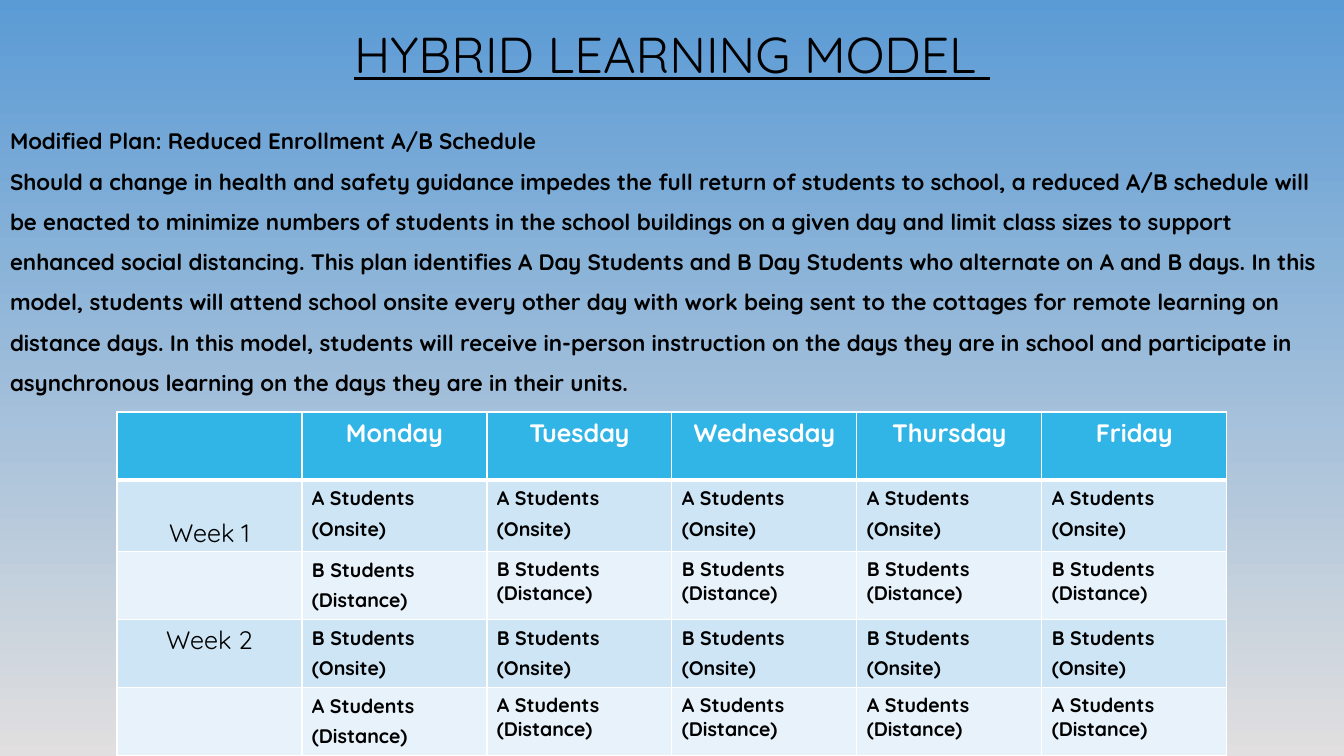
from dataclasses import dataclass

from pptx import Presentation
from pptx.dml.color import RGBColor
from pptx.enum.text import MSO_ANCHOR, MSO_AUTO_SIZE, PP_ALIGN
from pptx.oxml import parse_xml
from pptx.oxml.ns import nsdecls
from pptx.util import Emu, Pt

LEFT, CENTER = PP_ALIGN.LEFT, PP_ALIGN.CENTER
TOP = MSO_ANCHOR.TOP
FIXED_SIZE = MSO_AUTO_SIZE.NONE

# Scale: 100.8 px to the inch
PX = 914400 / 100.8
PAGE_WIDTH, PAGE_HEIGHT = 1344, 756
INSET_X, INSET_Y = 10, 5
CELL_BOTTOM_INSET = 3

FONT = "Quicksand"
BLACK = RGBColor(0x00, 0x00, 0x00)
WHITE = RGBColor(0xFF, 0xFF, 0xFF)
SKY = RGBColor(0x5B, 0x9B, 0xD5)
MIST = RGBColor(0xE1, 0xDF, 0xDF)
HEADER_BLUE = RGBColor(0x31, 0xB4, 0xE6)
BAND_DARK = RGBColor(0xCE, 0xE5, 0xF5)
BAND_LIGHT = RGBColor(0xE8, 0xF2, 0xFA)

TITLE = "HYBRID LEARNING MODEL "
PLAN = [
    "Modified Plan: Reduced Enrollment A/B Schedule",
    "Should a change in health and safety guidance impedes the full return of "
    "students to school, a reduced A/B schedule will be enacted to minimize "
    "numbers of students in the school buildings on a given day and limit class "
    "sizes to support enhanced social distancing. This plan identifies A Day "
    "Students and B Day Students who alternate on A and B days. In this model, "
    "students will attend school onsite every other day with work being sent to "
    "the cottages for remote learning on distance days. In this model, students "
    "will receive in-person instruction on the days they are in school and "
    "participate in asynchronous learning on the days they are in their units.",
]
DAYS = ["Monday", "Tuesday", "Wednesday", "Thursday", "Friday"]
TABLE_LEFT, TABLE_TOP, COLUMN_WIDTH = 117, 412, 185
HEADER_HEIGHT = 68


@dataclass(frozen=True)
class WeekRow:
    week: str
    entry: str
    fill: RGBColor
    height: int = 68
    week_inset: int = INSET_Y
    loose_days: int = len(DAYS)  # leading days set with wider line spacing


WEEK_ROWS = [
    WeekRow("Week 1", "A Students (Onsite)", BAND_DARK, height=71, week_inset=37),
    WeekRow("", "B Students (Distance)", BAND_LIGHT, loose_days=1),
    WeekRow("Week 2", "B Students (Onsite)", BAND_DARK),
    WeekRow("", "A Students (Distance)", BAND_LIGHT, loose_days=1),
]


def px(length: int) -> Emu:
    return Emu(round(length * PX))


def write(para, text: str, *, size: int, color: RGBColor = BLACK, bold: bool = False,
          underline: bool = False, align=LEFT, spacing: float = 1.0) -> None:
    para.alignment = align
    para.line_spacing = spacing
    para.space_before = para.space_after = Pt(0)
    span = para.add_run()
    span.text = text
    font = span.font
    font.name, font.size, font.bold, font.underline = FONT, Pt(size), bold, underline
    font.color.rgb = color


def place(box, left: int, top: int, width: int, height: int):
    """Move a placeholder and return its text frame, set to wrap from the top."""
    box.left, box.top, box.width, box.height = map(px, (left, top, width, height))
    frame = box.text_frame
    frame.auto_size = FIXED_SIZE
    frame.word_wrap = True
    frame.vertical_anchor = TOP
    frame.margin_left = frame.margin_right = px(INSET_X)
    frame.margin_top = frame.margin_bottom = px(INSET_Y)
    return frame


def remove_bullet(para) -> None:
    properties = para._p.get_or_add_pPr()
    properties.set("marL", "0")
    properties.set("indent", "0")
    properties.append(parse_xml(f"<a:buNone {nsdecls('a')}/>"))


def style_cell(cell, fill: RGBColor, *, top_line: int = 1, bottom_line: int = 1,
               top_inset: int = INSET_Y) -> None:
    cell.fill.solid()
    cell.fill.fore_color.rgb = fill
    cell.vertical_anchor = TOP
    cell.margin_left = cell.margin_right = px(INSET_X)
    cell.margin_top, cell.margin_bottom = px(top_inset), px(CELL_BOTTOM_INSET)
    properties = cell._tc.get_or_add_tcPr()
    sides = {"lnL": 1, "lnR": 1, "lnT": top_line, "lnB": bottom_line}
    for index, (side, points) in enumerate(sides.items()):
        properties.insert(index, parse_xml(
            f'<a:{side} {nsdecls("a")} w="{Pt(points)}"><a:solidFill>'
            f'<a:srgbClr val="{WHITE}"/></a:solidFill></a:{side}>'))


def add_schedule(page) -> None:
    heights = [HEADER_HEIGHT] + [row.height for row in WEEK_ROWS]
    columns = len(DAYS) + 1
    table = page.shapes.add_table(
        len(heights), columns, px(TABLE_LEFT), px(TABLE_TOP),
        px(COLUMN_WIDTH * columns), px(sum(heights))).table
    for column in table.columns:
        column.width = px(COLUMN_WIDTH)
    for table_row, height in zip(table.rows, heights):
        table_row.height = px(height)

    # Header row
    for column, day in enumerate(["", *DAYS]):
        cell = table.cell(0, column)
        style_cell(cell, HEADER_BLUE, bottom_line=3)
        if day:
            write(cell.text_frame.paragraphs[0], day, size=18, color=WHITE,
                  bold=True, align=CENTER)

    # Week rows
    for number, row in enumerate(WEEK_ROWS, start=1):
        top_line = 3 if number == 1 else 1
        week_cell = table.cell(number, 0)
        style_cell(week_cell, row.fill, top_line=top_line, top_inset=row.week_inset)
        if row.week:
            write(week_cell.text_frame.paragraphs[0], row.week, size=18, align=CENTER)
        for column in range(1, columns):
            # Wider spacing also lifts the first line, so it needs no top inset
            loose = column <= row.loose_days
            cell = table.cell(number, column)
            style_cell(cell, row.fill, top_line=top_line,
                       top_inset=0 if loose else INSET_Y)
            write(cell.text_frame.paragraphs[0], row.entry, size=14, bold=True,
                  spacing=1.25 if loose else 1.0)


def main() -> None:
    deck = Presentation()
    deck.slide_width, deck.slide_height = px(PAGE_WIDTH), px(PAGE_HEIGHT)
    page = deck.slides.add_slide(deck.slide_layouts[1])

    # Background, top to bottom
    background = page.background.fill
    background.gradient()
    background.gradient_angle = 270
    for stop, color in zip(background.gradient_stops, (SKY, MIST)):
        stop.color.rgb = color

    # Title and plan
    title_frame = place(page.shapes.title, 0, 18, PAGE_WIDTH, 72)
    write(title_frame.paragraphs[0], TITLE, size=36, underline=True, align=CENTER)
    plan_frame = place(page.placeholders[1], 0, 109, PAGE_WIDTH, 296)
    for index, text in enumerate(PLAN):
        para = plan_frame.add_paragraph() if index else plan_frame.paragraphs[0]
        write(para, text, size=16, bold=True, spacing=1.5)
        remove_bullet(para)

    add_schedule(page)
    deck.save("out.pptx")


if __name__ == "__main__":
    main()
